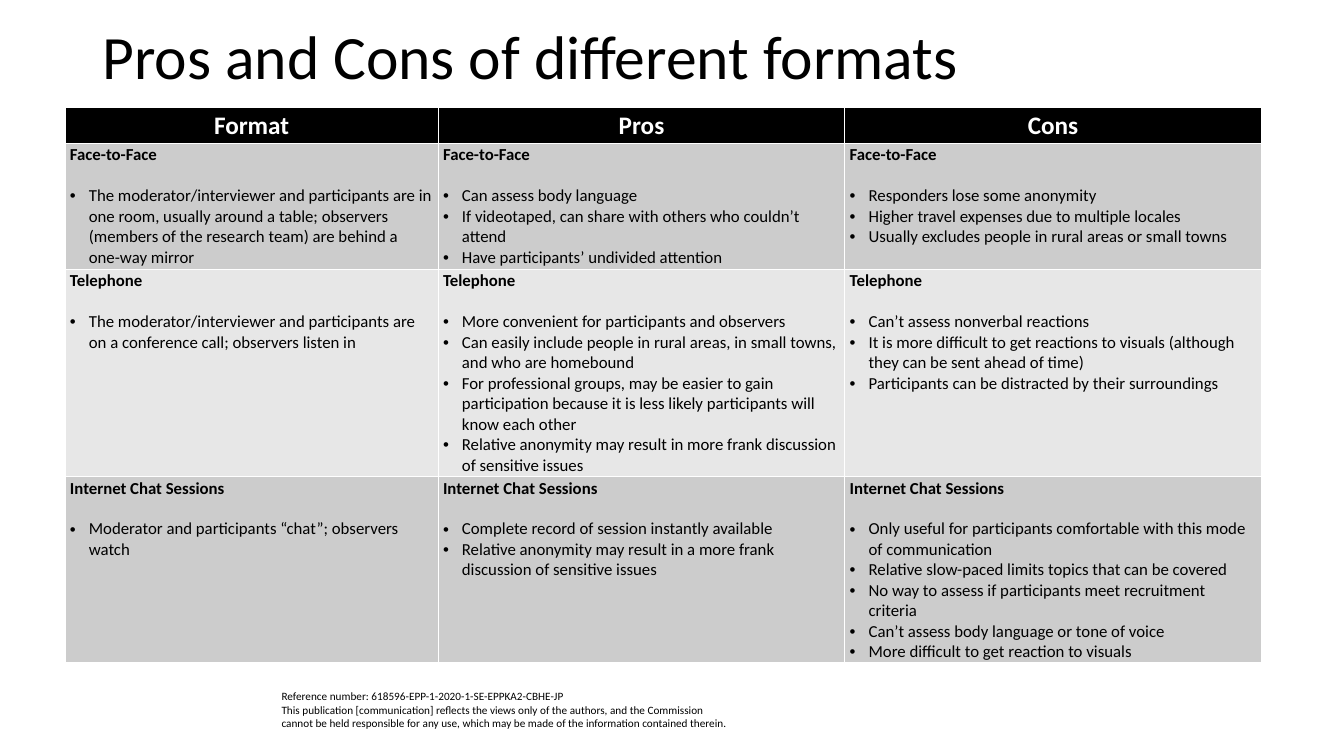
from lxml import etree
from pptx import Presentation
from pptx.dml.color import RGBColor
from pptx.enum.text import MSO_ANCHOR, PP_ALIGN
from pptx.oxml.ns import qn
from pptx.util import Pt

LEFT = PP_ALIGN.LEFT
CENTER = PP_ALIGN.CENTER
MIDDLE = MSO_ANCHOR.MIDDLE
TITLE_ONLY = 5

FONT = "Calibri"
COLORS = {
    "text": "000000",
    "header_fill": "000000",
    "header_text": "FFFFFF",
    "odd_row": "CCCCCC",
    "even_row": "E7E7E7",
}

COLUMN_WIDTHS = [266.5, 290.5, 297.5]
HEADER_HEIGHT = 26
HEADERS = ["Format", "Pros", "Cons"]

# Each row: format name, height, then the bullets of the three columns
FORMATS = [
    ("Face-to-Face", 90, [
        ["The moderator/interviewer and participants are in one room, usually around a table; "
         "observers (members of the research team) are behind a one-way mirror"],
        ["Can assess body language",
         "If videotaped, can share with others who couldn’t attend",
         "Have participants’ undivided attention"],
        ["Responders lose some anonymity",
         "Higher travel expenses due to multiple locales",
         "Usually excludes people in rural areas or small towns"],
    ]),
    ("Telephone", 148, [
        ["The moderator/interviewer and participants are on a conference call; "
         "observers listen in"],
        ["More convenient for participants and observers",
         "Can easily include people in rural areas, in small towns, and who are homebound",
         "For professional groups, may be easier to gain participation because it is less "
         "likely participants will know each other",
         "Relative anonymity may result in more frank discussion of sensitive issues"],
        ["Can’t assess nonverbal reactions",
         "It is more difficult to get reactions to visuals (although they can be sent ahead "
         "of time)",
         "Participants can be distracted by their surroundings"],
    ]),
    ("Internet Chat Sessions", 133, [
        ["Moderator and participants “chat”; observers watch"],
        ["Complete record of session instantly available",
         "Relative anonymity may result in a more frank discussion of sensitive issues"],
        ["Only useful for participants comfortable with this mode of communication",
         "Relative slow-paced limits topics that can be covered",
         "No way to assess if participants meet recruitment criteria",
         "Can’t assess body language or tone of voice",
         "More difficult to get reaction to visuals"],
    ]),
]

REFERENCE = [
    "Reference number: 618596-EPP-1-2020-1-SE-EPPKA2-CBHE-JP",
    "This publication [communication] reflects the views only of the authors, and the "
    "Commission cannot be held responsible for any use, which may be made of the "
    "information contained therein.",
]


def style_paragraph(paragraph, size, color="text", bold=False, align=LEFT):
    paragraph.alignment = align
    font = paragraph.font
    font.name = FONT
    font.size = Pt(size)
    font.bold = bold
    font.color.rgb = RGBColor.from_string(COLORS[color])


def add_bullet(paragraph):
    properties = paragraph._p.get_or_add_pPr()
    properties.set("marL", str(Pt(13.5)))
    properties.set("indent", str(-Pt(13.5)))
    etree.SubElement(properties, qn("a:buFont"), typeface="Arial")
    etree.SubElement(properties, qn("a:buChar"), char="•")


def prepare_cell(cell, fill):
    cell.fill.solid()
    cell.fill.fore_color.rgb = RGBColor.from_string(COLORS[fill])
    cell.margin_left = cell.margin_right = Pt(3.5)
    cell.margin_top = Pt(1)
    cell.margin_bottom = 0


def fill_header_cell(cell, text):
    prepare_cell(cell, "header_fill")
    cell.vertical_anchor = MIDDLE
    paragraph = cell.text_frame.paragraphs[0]
    paragraph.text = text
    style_paragraph(paragraph, 18, "header_text", bold=True, align=CENTER)


def fill_format_cell(cell, name, bullets, fill):
    prepare_cell(cell, fill)
    heading = cell.text_frame.paragraphs[0]
    heading.text = name
    heading.space_after = Pt(14.6)
    style_paragraph(heading, 12, bold=True)
    for bullet in bullets:
        paragraph = cell.text_frame.add_paragraph()
        paragraph.text = bullet
        add_bullet(paragraph)
        style_paragraph(paragraph, 12)


def add_title(slide, text):
    title = slide.shapes.title
    title.left, title.top, title.width, title.height = Pt(66), Pt(8), Pt(828), Pt(69)
    title.text_frame.vertical_anchor = MIDDLE
    paragraph = title.text_frame.paragraphs[0]
    paragraph.text = text
    paragraph.line_spacing = 0.9
    style_paragraph(paragraph, 44)


def add_formats_table(slide):
    heights = [HEADER_HEIGHT] + [height for _, height, _ in FORMATS]
    frame = slide.shapes.add_table(
        len(heights), len(HEADERS), Pt(46.5), Pt(76.5),
        Pt(sum(COLUMN_WIDTHS)), Pt(sum(heights)))
    table = frame.table
    for column, width in zip(table.columns, COLUMN_WIDTHS):
        column.width = Pt(width)
    for row, height in zip(table.rows, heights):
        row.height = Pt(height)
    for column, text in enumerate(HEADERS):
        fill_header_cell(table.cell(0, column), text)
    for row, (name, _, columns) in enumerate(FORMATS, start=1):
        fill = "odd_row" if row % 2 else "even_row"
        for column, bullets in enumerate(columns):
            fill_format_cell(table.cell(row, column), name, bullets, fill)


def add_reference(slide):
    box = slide.shapes.add_textbox(Pt(194), Pt(489), Pt(334), Pt(36))
    text_frame = box.text_frame
    text_frame.word_wrap = True
    text_frame.text = "\n".join(REFERENCE)
    for paragraph in text_frame.paragraphs:
        style_paragraph(paragraph, 8)


def main():
    presentation = Presentation()
    presentation.slide_width = Pt(960)
    presentation.slide_height = Pt(540)
    slide = presentation.slides.add_slide(presentation.slide_layouts[TITLE_ONLY])
    add_title(slide, "Pros and Cons of different formats")
    add_formats_table(slide)
    add_reference(slide)
    presentation.save("out.pptx")


if __name__ == "__main__":
    main()
